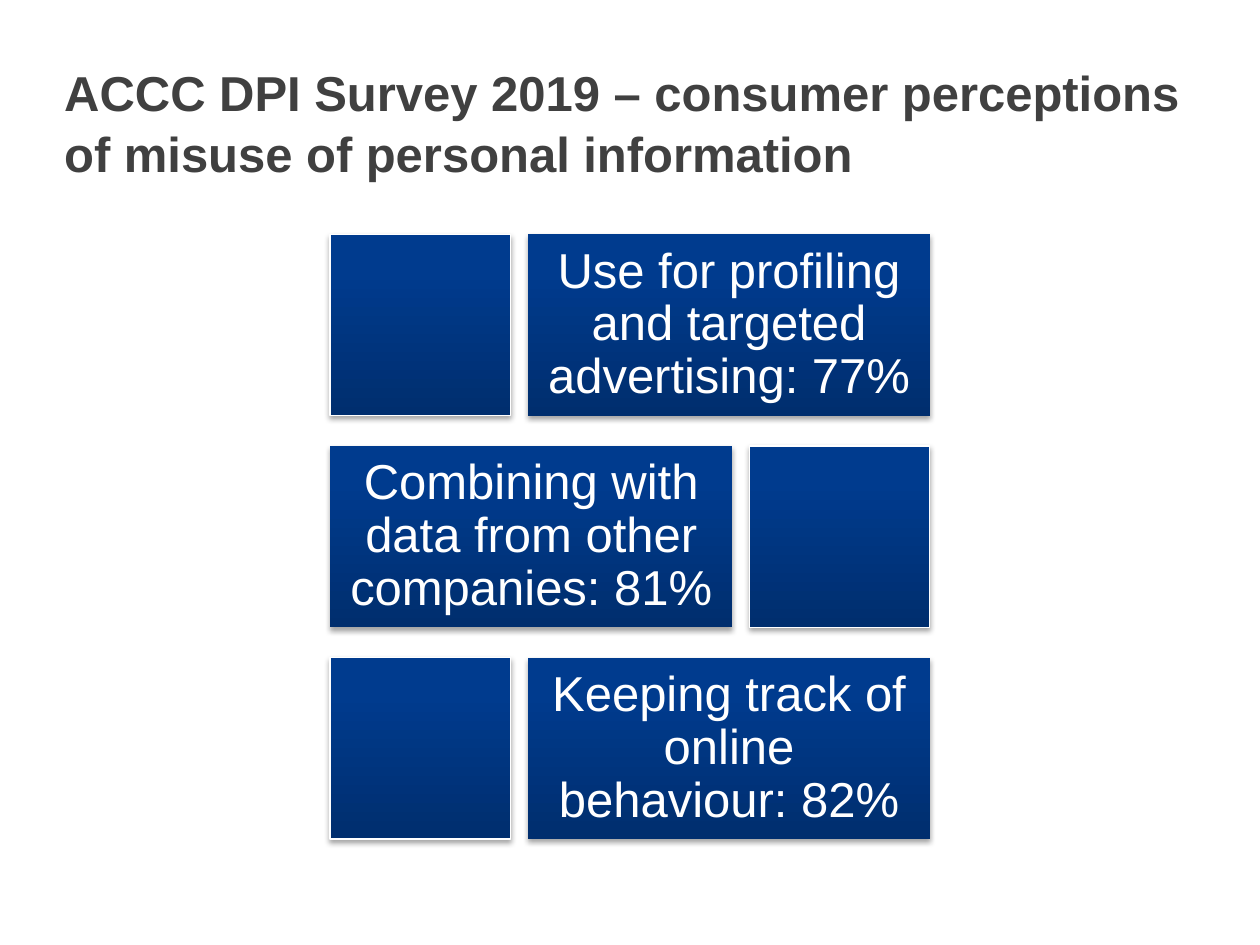
from copy import deepcopy
from dataclasses import dataclass

from lxml.etree import SubElement
from pptx import Presentation
from pptx.dml.color import RGBColor
from pptx.enum.shapes import MSO_SHAPE as Preset
from pptx.enum.text import MSO_ANCHOR as Anchor, MSO_AUTO_SIZE as AutoSize, PP_ALIGN as Align
from pptx.oxml.ns import qn
from pptx.shapes.autoshape import Shape
from pptx.slide import Slide
from pptx.text.text import TextFrame
from pptx.util import Pt

EMU_PER_PX = 9144  # 100 px to the inch
COLORS = {
    "title": "404040",
    "white": "FFFFFF",
    "shadow": "000000",
    "bottom": "002E6E",
    "upper": "003B8E",
    "top": "003B8F",
}
FONT_NAME = "Arial"
FONT_SIZE = Pt(28)

GRID_LEFT, GRID_TOP, GRID_WIDTH = 262, 186, 476
ROW_PITCH, ROW_HEIGHT = 168, 144
PANEL_WIDTH, SQUARE_WIDTH = 319, 143


@dataclass(frozen=True)
class Finding:
    text: str
    panel_on_right: bool


FINDINGS = [
    Finding("Use for profiling and targeted advertising: 77%", True),
    Finding("Combining with data from other companies: 81%", False),
    Finding("Keeping track of online behaviour: 82%", True),
]


def px(length: int) -> int:
    return length * EMU_PER_PX


def rgb(name: str) -> RGBColor:
    return RGBColor.from_string(COLORS[name])


def write_text(frame: TextFrame, text: str, color: str, margin: int,
               line_spacing: float, align: Align, bold: bool = False) -> None:
    frame.word_wrap = True
    frame.margin_left = frame.margin_right = px(margin)
    frame.margin_top = frame.margin_bottom = px(margin)
    paragraph = frame.paragraphs[0]
    paragraph.text = text
    paragraph.alignment = align
    paragraph.line_spacing = line_spacing
    paragraph.font.name = FONT_NAME
    paragraph.font.size = FONT_SIZE
    paragraph.font.bold = bold
    paragraph.font.color.rgb = rgb(color)


def fill_with_gradient(shape: Shape) -> None:
    """Shade from the dark bottom edge up to the lighter top edge."""
    shape.fill.gradient()
    shape.fill.gradient_angle = 90
    stop_list = shape.element.spPr.find(f".//{qn('a:gsLst')}")
    stop_list.insert(1, deepcopy(stop_list[0]))
    levels = [("bottom", 0), ("upper", 0.8), ("top", 1)]
    for stop, (color, position) in zip(shape.fill.gradient_stops, levels):
        stop.color.rgb = rgb(color)
        stop.position = position


def add_drop_shadow(shape: Shape) -> None:
    shape.shadow.inherit = False
    effects = shape.element.spPr.find(qn("a:effectLst"))
    shadow = SubElement(effects, qn("a:outerShdw"), blurRad="40000", dist="23000",
                        dir="5400000", rotWithShape="0")
    color = SubElement(shadow, qn("a:srgbClr"), val=COLORS["shadow"])
    SubElement(color, qn("a:alpha"), val="35000")


def add_block(slide: Slide, left: int, top: int, width: int) -> Shape:
    block = slide.shapes.add_shape(Preset.RECTANGLE, px(left), px(top), px(width), px(ROW_HEIGHT))
    fill_with_gradient(block)
    add_drop_shadow(block)
    return block


def add_finding(slide: Slide, finding: Finding, top: int) -> None:
    """Draw a text panel with a plain square on its other side."""
    panel_left = square_left = GRID_LEFT
    if finding.panel_on_right:
        panel_left += GRID_WIDTH - PANEL_WIDTH
    else:
        square_left += GRID_WIDTH - SQUARE_WIDTH

    panel = add_block(slide, panel_left, top, PANEL_WIDTH)
    panel.line.fill.background()
    panel.text_frame.vertical_anchor = Anchor.MIDDLE
    write_text(panel.text_frame, finding.text, "white", 12, 0.9, Align.CENTER)

    square = add_block(slide, square_left, top, SQUARE_WIDTH)
    square.line.color.rgb = rgb("white")
    square.line.width = Pt(0.75)


def add_title(slide: Slide, text: str) -> None:
    title = slide.shapes.add_textbox(px(51), px(47), px(898), px(94))
    write_text(title.text_frame, text, "title", 0, 1.05, Align.LEFT, bold=True)
    title.text_frame.auto_size = AutoSize.SHAPE_TO_FIT_TEXT


def main() -> None:
    presentation = Presentation()
    presentation.slide_width, presentation.slide_height = px(1000), px(750)
    slide = presentation.slides.add_slide(presentation.slide_layouts[6])
    add_title(slide, "ACCC DPI Survey 2019 – consumer perceptions of misuse of personal information")
    for row, finding in enumerate(FINDINGS):
        add_finding(slide, finding, GRID_TOP + row * ROW_PITCH)
    presentation.save("out.pptx")


if __name__ == "__main__":
    main()
